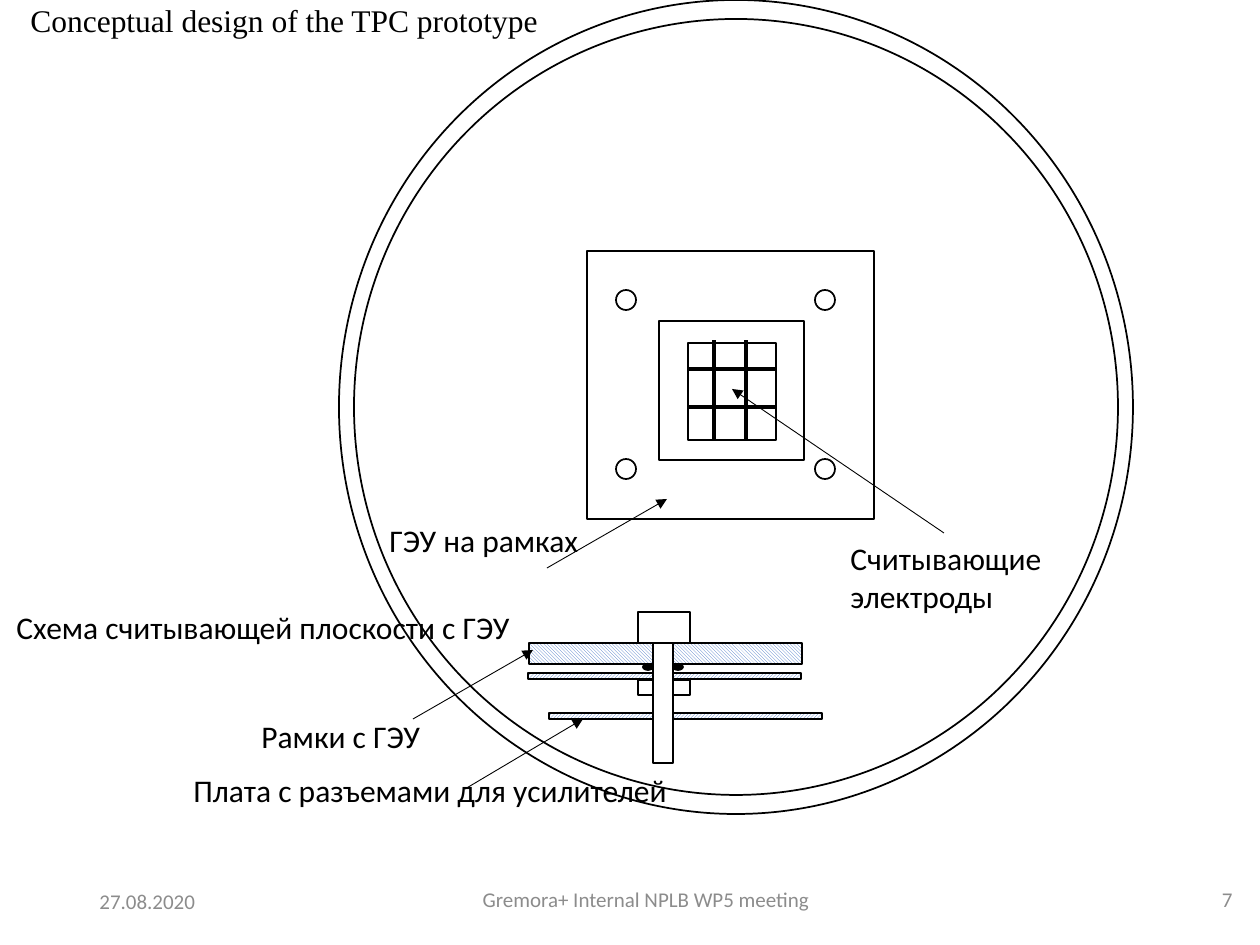
from dataclasses import dataclass

from lxml import etree
from pptx import Presentation
from pptx.dml.color import RGBColor
from pptx.enum.dml import MSO_PATTERN
from pptx.enum.shapes import MSO_CONNECTOR, MSO_SHAPE
from pptx.enum.text import MSO_ANCHOR, MSO_AUTO_SIZE, PP_ALIGN
from pptx.oxml.ns import qn
from pptx.util import Emu, Pt

RECT, OVAL = MSO_SHAPE.RECTANGLE, MSO_SHAPE.OVAL
LINE = MSO_CONNECTOR.STRAIGHT
UP, DOWN = MSO_PATTERN.LIGHT_UPWARD_DIAGONAL, MSO_PATTERN.LIGHT_DOWNWARD_DIAGONAL
LEFT, MID, RIGHT = PP_ALIGN.LEFT, PP_ALIGN.CENTER, PP_ALIGN.RIGHT
TOP, CENTER = MSO_ANCHOR.TOP, MSO_ANCHOR.MIDDLE
GROW, FIXED = MSO_AUTO_SIZE.SHAPE_TO_FIT_TEXT, MSO_AUTO_SIZE.NONE


@dataclass(frozen=True)
class Theme:
    ink: str = "000000"
    paper: str = "FFFFFF"
    hatch: str = "4472C4"
    muted: str = "8C8C8C"
    sans: str = "Calibri"
    serif: str = "Times New Roman"
    body: int = 18
    small: int = 12
    thin: float = 0.5
    edge: int = 1
    thick: int = 2


def px(num):
    return Emu(round(num * 914400 / 126))


def rgb(code):
    return RGBColor.from_string(code)


def write(frame, text, *, size, color, font, align=LEFT):
    """Put one paragraph per line of text into a frame."""
    for num, line in enumerate(text.split("\n")):
        para = frame.add_paragraph() if num else frame.paragraphs[0]
        para.alignment = align
        run = para.add_run()
        run.text = line
        run.font.size = Pt(size)
        run.font.name = font
        run.font.color.rgb = rgb(color)


class Board:
    def __init__(self, slide, theme):
        self.slide = slide
        self.theme = theme

    def shape(self, kind, box, fill=None, hatch=None):
        item = self.slide.shapes.add_shape(kind, *map(px, box))
        item.shadow.inherit = False
        item.line.color.rgb = rgb(self.theme.ink)
        item.line.width = Pt(self.theme.edge)
        if hatch:
            item.fill.patterned()
            item.fill.pattern = hatch
            item.fill.fore_color.rgb = rgb(self.theme.hatch)
            item.fill.back_color.rgb = rgb(self.theme.paper)
        elif fill:
            item.fill.solid()
            item.fill.fore_color.rgb = rgb(fill)
        else:
            item.fill.background()

    def line(self, ends, width, arrow=False):
        item = self.slide.shapes.add_connector(LINE, *map(px, ends))
        item.line.color.rgb = rgb(self.theme.ink)
        item.line.width = Pt(width)
        if arrow:
            tip = etree.SubElement(item.line._get_or_add_ln(), qn("a:tailEnd"))
            tip.set("type", "triangle")
        etree.SubElement(item._element.spPr, qn("a:effectLst"))

    def text(self, box, text, *, wrap=False, anchor=TOP, **style):
        frame = self.slide.shapes.add_textbox(*map(px, box)).text_frame
        frame.word_wrap = wrap
        frame.auto_size = FIXED if wrap else GROW
        frame.vertical_anchor = anchor
        base = {"size": self.theme.body, "color": self.theme.ink,
                "font": self.theme.sans}
        write(frame, text, **(base | style))


def footer(board):
    theme = board.theme
    for box, text, align in (
        ((87, 876, 284, 50), "27.08.2020", LEFT),
        ((433, 874, 426, 50), "Gremora+ Internal NPLB WP5 meeting", MID),
        ((961, 874, 284, 50), "7", RIGHT),
    ):
        board.text(box, text, wrap=True, anchor=CENTER, align=align,
                   size=theme.small, color=theme.muted)


def plane(board):
    # Vessel walls
    board.shape(OVAL, (339, 0, 794, 814))
    board.shape(OVAL, (354, 19, 764, 776))

    # Mounting holes
    for y in (290, 459):
        for x in (616, 815):
            board.shape(OVAL, (x, y, 20, 20))

    # Frame, window and pad field
    for box in ((587, 251, 287, 268), (659, 321, 145, 139), (688, 343, 88, 97)):
        board.shape(RECT, box)
    for y in (369, 407):
        board.line((688, y, 776, y), board.theme.thick)
    for x in (714, 746):
        board.line((x, 440, x, 340), board.theme.thick)


def section(board):
    theme = board.theme
    # Hatched frames and seals
    board.shape(RECT, (528, 673, 273, 6), hatch=UP)
    board.shape(RECT, (529, 643, 273, 21), hatch=DOWN)
    for x in (643, 673):
        board.shape(OVAL, (x, 664, 10, 6), fill=theme.ink)

    # Bolt head, connector board and rod
    board.shape(RECT, (638, 612, 52, 31), fill=theme.paper)
    board.shape(RECT, (549, 713, 273, 6), hatch=UP)
    board.shape(RECT, (653, 643, 20, 120), fill=theme.paper)


def labels(board):
    for ends in ((547, 568, 667, 499), (944, 533, 732, 389),
                 (465, 789, 583, 719), (413, 719, 533, 650)):
        board.line(ends, board.theme.thin, arrow=True)
    for box, text in (
        ((4, 602, 524, 50), "Схема считывающей плоскости с ГЭУ"),
        ((377, 515, 217, 50), "ГЭУ на рамках"),
        ((838, 533, 219, 89), "Считывающие\nэлектроды"),
        ((181, 765, 504, 50), "Плата с разъемами для усилителей"),
        ((249, 711, 186, 50), "Рамки с ГЭУ"),
    ):
        board.text(box, text)
    board.text((18, -5, 538, 50), "Conceptual design of the TPC prototype",
               font=board.theme.serif)


def main():
    deck = Presentation()
    deck.slide_width, deck.slide_height = px(1260), px(945)
    board = Board(deck.slides.add_slide(deck.slide_layouts[6]), Theme())
    footer(board)
    # The lower nut lies behind everything else
    board.shape(RECT, (638, 680, 52, 15), fill=board.theme.paper)
    plane(board)
    section(board)
    labels(board)
    deck.save("out.pptx")


if __name__ == "__main__":
    main()
